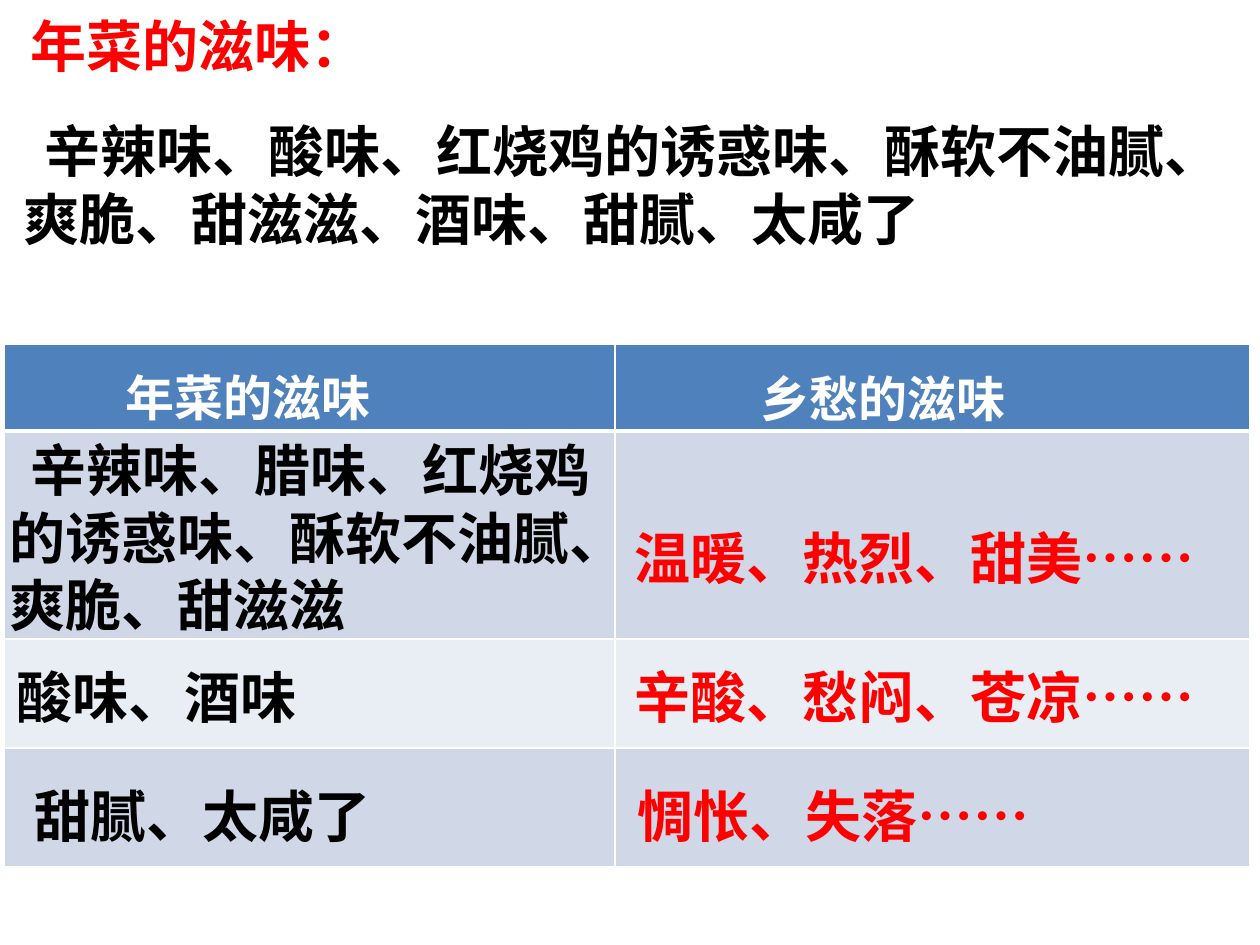
from dataclasses import dataclass

from lxml.etree import SubElement
from pptx import Presentation
from pptx.dml.color import RGBColor
from pptx.enum.lang import MSO_LANGUAGE_ID
from pptx.enum.text import MSO_AUTO_SIZE
from pptx.oxml.ns import qn
from pptx.util import Pt

SCALE = 914400 / 126
COLORS = {
    "red": "FF0000",
    "black": "000000",
    "white": "FFFFFF",
    "head": "4F81BD",
    "dark": "D0D8E8",
    "light": "E9EDF4",
}
SANS = "Noto Sans CJK SC"
ALT = "Noto Sans CJK JP"
COLS = [611, 635]
ROWS = [(87, "head"), (208, "dark"), (109, "light"), (119, "dark")]


@dataclass
class Label:
    text: str
    left: int
    top: int
    width: int
    height: int
    color: str = "black"
    size: int = 32
    font: str = SANS
    wrap: bool = False
    indent: int = 0


LABELS = [
    Label("年菜的滋味：", -3, 0, 394, 81, "red", wrap=True, indent=21),
    Label("辛辣味、酸味、红烧鸡的诱惑味、酥软不油腻、爽脆、甜滋滋、酒味、甜腻、太咸了",
          11, 106, 1225, 149, wrap=True, indent=21),
    Label("年菜的滋味", 113, 357, 273, 72, "white", 28),
    Label("酸味、酒味", 4, 651, 309, 81),
    Label("甜腻、太咸了", 1, 770, 386, 81, indent=21),
    Label("辛辣味、腊味、红烧鸡的诱惑味、酥软不油腻、爽脆、甜滋滋",
          -3, 425, 609, 217, wrap=True, indent=21),
    Label("温暖、热烈、甜美……", 622, 512, 638, 81, "red", font=ALT, wrap=True),
    Label("辛酸、愁闷、苍凉……", 622, 651, 593, 81, "red", font=ALT),
    Label("惆怅、失落……", 625, 771, 421, 81, "red", font=ALT),
    Label("乡愁的滋味", 748, 358, 273, 72, "white", 28),
]


def px(count: int) -> int:
    return round(count * SCALE)


def rgb(name: str) -> RGBColor:
    return RGBColor.from_string(COLORS[name])


def edge(cell, side: str, width: int) -> None:
    line = SubElement(cell._tc.get_or_add_tcPr(), qn(f"a:ln{side}"), w=str(Pt(width)))
    fill = SubElement(line, qn("a:solidFill"))
    SubElement(fill, qn("a:srgbClr"), val=COLORS["white"])


def draw_grid(slide) -> None:
    height = sum(size for size, _ in ROWS)
    grid = slide.shapes.add_table(
        len(ROWS), len(COLS), px(4), px(344), px(sum(COLS)), px(height)).table
    for col, width in zip(grid.columns, COLS):
        col.width = px(width)
    for at, (row, (size, color)) in enumerate(zip(grid.rows, ROWS)):
        row.height = px(size)
        for cell in row.cells:
            for side in "LRTB":
                thick = (at, side) in ((0, "B"), (1, "T"))
                edge(cell, side, 3 if thick else 1)
            cell.fill.solid()
            cell.fill.fore_color.rgb = rgb(color)


def draw_label(slide, label: Label) -> None:
    box = slide.shapes.add_textbox(
        px(label.left), px(label.top), px(label.width), px(label.height))
    frame = box.text_frame
    frame.text = label.text
    frame.word_wrap = label.wrap
    frame.auto_size = MSO_AUTO_SIZE.SHAPE_TO_FIT_TEXT
    frame.margin_top, frame.margin_bottom = px(11), px(1)
    para = frame.paragraphs[0]
    para.line_spacing = Pt(label.size * 1.2)
    if label.indent:
        para._p.get_or_add_pPr().set("indent", str(px(label.indent)))
    run = para.runs[0]
    font = run.font
    font.size = Pt(label.size)
    font.bold = True
    font.name = label.font
    font.language_id = MSO_LANGUAGE_ID.SIMPLIFIED_CHINESE
    font.color.rgb = rgb(label.color)
    SubElement(run._r.get_or_add_rPr(), qn("a:ea"), typeface=label.font)


def main() -> None:
    deck = Presentation()
    deck.slide_width, deck.slide_height = px(1260), px(945)
    slide = deck.slides.add_slide(deck.slide_layouts[6])
    draw_grid(slide)
    for label in LABELS:
        draw_label(slide, label)
    deck.save("out.pptx")


if __name__ == "__main__":
    main()
